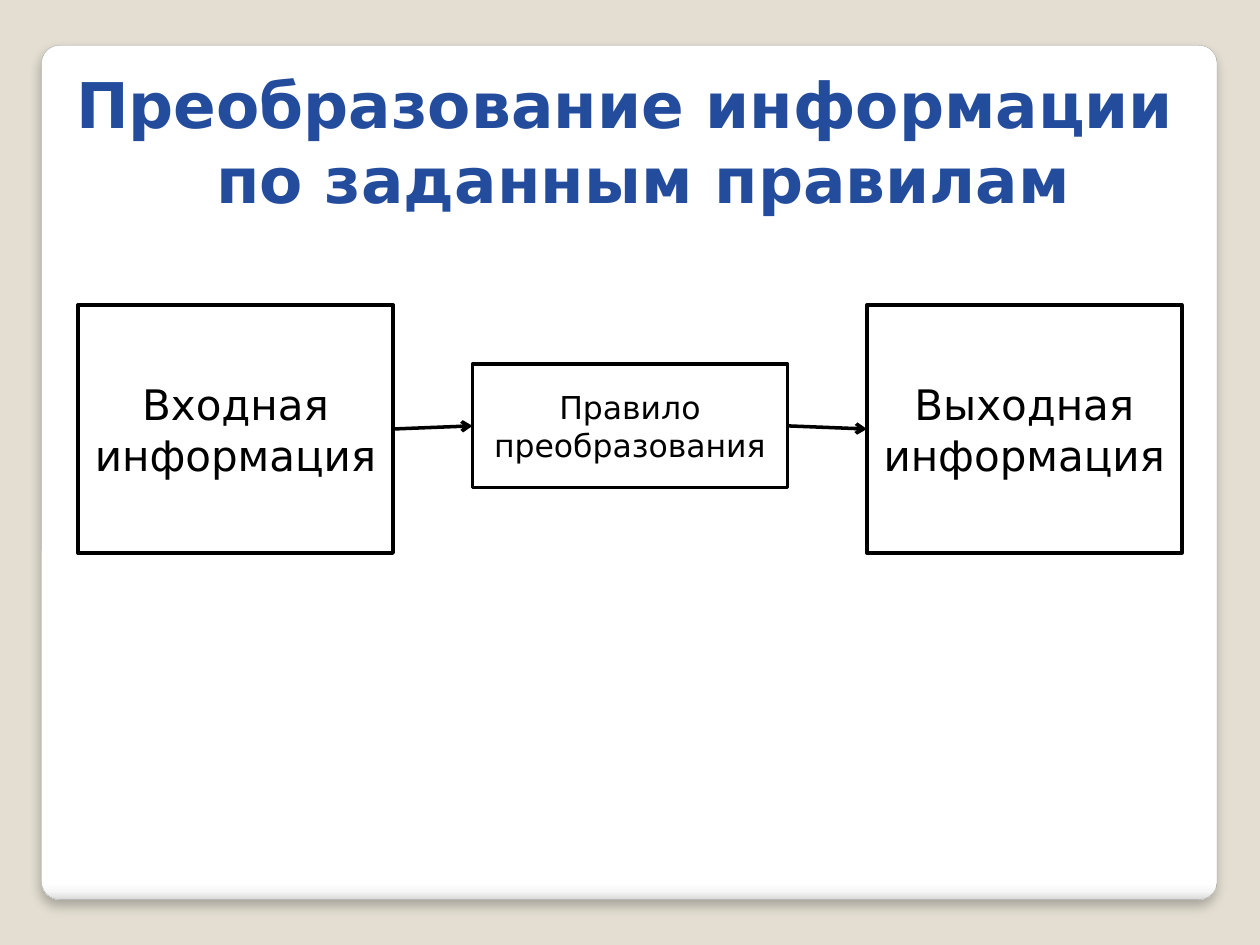
from dataclasses import dataclass

import pptx
import pptx.dml.color
import pptx.enum.shapes
import pptx.enum.text
import pptx.oxml
import pptx.oxml.ns
import pptx.util
from pptx.util import Inches

COLORS = {
    "background": "E3DED1",
    "card_line": "A4A4A4",
    "title": "244C9C",
    "ink": "000000",
    "paper": "FFFFFF",
}
CARD_STOPS = ((0, "FFFFFF"), (98, "FFFFFF"), (99, "F7F7F7"), (100, "DADADA"))
FONT = "DejaVu Sans"
BOX_WIDTH = 2.5
BOX_PITCH = 3.13
FIRST_BOX_LEFT = 0.62
NAMESPACE = pptx.oxml.ns.nsdecls("a")


@dataclass(frozen=True)
class Stage:
    label: str
    column: int
    top: float
    height: float
    size: int

    @property
    def left(self) -> float:
        return FIRST_BOX_LEFT + self.column * BOX_PITCH

    @property
    def middle(self) -> float:
        return self.top + self.height / 2


STAGES = (
    Stage("Входная информация", 0, 2.42, 1.97, 24),
    Stage("Правило преобразования", 1, 2.89, 0.98, 18),
    Stage("Выходная информация", 2, 2.42, 1.97, 24),
)


def rgb(name: str) -> pptx.dml.color.RGBColor:
    return pptx.dml.color.RGBColor.from_string(COLORS[name])


def set_line(line, color: str, width: float) -> None:
    line.color.rgb = rgb(color)
    line.width = pptx.util.Pt(width)


def set_text(frame, text: str, size: int, color: str, bold: bool = False):
    """Fill the frame with one centred, wrapped paragraph and return it."""
    frame.word_wrap = True
    paragraph = frame.paragraphs[0]
    paragraph.text = text
    paragraph.alignment = pptx.enum.text.PP_ALIGN.CENTER
    font = paragraph.runs[0].font
    font.name = FONT
    font.size = pptx.util.Pt(size)
    font.bold = bold
    font.color.rgb = rgb(color)
    return paragraph


def draw_card(slide) -> None:
    card = slide.shapes.add_shape(
        pptx.enum.shapes.MSO_SHAPE.ROUNDED_RECTANGLE,
        Inches(0.33), Inches(0.36), Inches(9.33), Inches(6.78),
    )
    card.adjustments[0] = 0.021
    card.fill.gradient()
    card.fill.gradient_angle = 270
    stops = card.element.spPr.find(".//" + pptx.oxml.ns.qn("a:gsLst"))
    for stop in list(stops):
        stops.remove(stop)
    for position, color in CARD_STOPS:
        stops.append(pptx.oxml.parse_xml(
            f'<a:gs {NAMESPACE} pos="{position * 1000}">'
            f'<a:srgbClr val="{color}"/></a:gs>'
        ))
    set_line(card.line, "card_line", 0.16)
    card.shadow.inherit = False
    effects = card.element.spPr.find(pptx.oxml.ns.qn("a:effectLst"))
    effects.append(pptx.oxml.parse_xml(
        f'<a:outerShdw {NAMESPACE} blurRad="{pptx.util.Pt(6)}" '
        f'dist="{pptx.util.Pt(4)}" dir="5400000" algn="t" rotWithShape="0">'
        f'<a:srgbClr val="{COLORS["ink"]}"><a:alpha val="25000"/></a:srgbClr>'
        "</a:outerShdw>"
    ))


def draw_title(slide) -> None:
    title = slide.shapes.add_textbox(
        Inches(0.39), Inches(0.47), Inches(9.14), Inches(1)
    )
    paragraph = set_text(
        title.text_frame, "Преобразование информации по заданным правилам",
        36, "title", bold=True,
    )
    paragraph.space_before = pptx.util.Pt(2.5)
    properties = paragraph._p.get_or_add_pPr()
    properties.set("marL", str(Inches(0.29)))
    properties.set("indent", str(Inches(-0.29)))


def draw_stage(slide, stage: Stage) -> None:
    box = slide.shapes.add_shape(
        pptx.enum.shapes.MSO_SHAPE.RECTANGLE,
        Inches(stage.left), Inches(stage.top),
        Inches(BOX_WIDTH), Inches(stage.height),
    )
    box.shadow.inherit = False
    box.fill.solid()
    box.fill.fore_color.rgb = rgb("paper")
    set_line(box.line, "ink", 2)
    box.text_frame.vertical_anchor = pptx.enum.text.MSO_ANCHOR.MIDDLE
    set_text(box.text_frame, stage.label, stage.size, "ink")


def draw_arrow(slide, source: Stage, target: Stage) -> None:
    arrow = slide.shapes.add_connector(
        pptx.enum.shapes.MSO_CONNECTOR.STRAIGHT,
        Inches(source.left + BOX_WIDTH), Inches(source.middle),
        Inches(target.left), Inches(target.middle),
    )
    set_line(arrow.line, "ink", 2)
    arrow.line._get_or_add_ln().append(
        pptx.oxml.parse_xml(f'<a:tailEnd {NAMESPACE} type="arrow"/>')
    )
    arrow.element.spPr.append(
        pptx.oxml.parse_xml(f"<a:effectLst {NAMESPACE}/>")
    )


def main() -> None:
    presentation = pptx.Presentation()
    presentation.slide_width = Inches(10)
    presentation.slide_height = Inches(7.5)
    slide = presentation.slides.add_slide(presentation.slide_layouts[6])
    slide.background.fill.solid()
    slide.background.fill.fore_color.rgb = rgb("background")
    draw_card(slide)
    draw_title(slide)
    for stage in STAGES:
        draw_stage(slide, stage)
    for source, target in zip(STAGES, STAGES[1:]):
        draw_arrow(slide, source, target)
    presentation.save("out.pptx")


if __name__ == "__main__":
    main()
